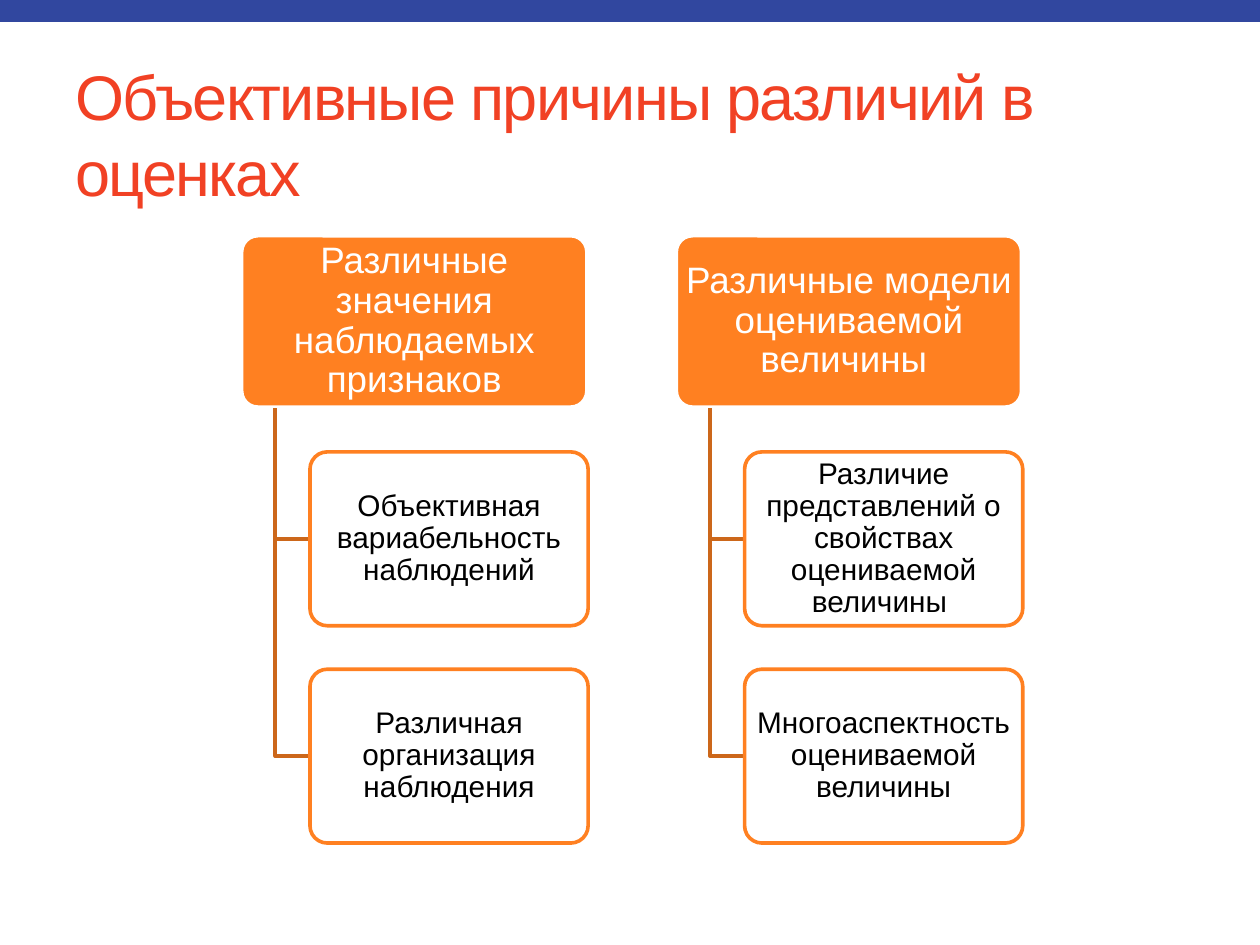
import dataclasses

import lxml.etree
import pptx
import pptx.dml.color
import pptx.enum.shapes
import pptx.enum.text
import pptx.oxml.ns
import pptx.util

Pt = pptx.util.Pt
RGB = pptx.dml.color.RGBColor
Kind = pptx.enum.shapes.MSO_SHAPE
Align = pptx.enum.text.PP_ALIGN
Anchor = pptx.enum.text.MSO_ANCHOR


@dataclasses.dataclass(frozen=True)
class Theme:
    font: str = "Arial"
    bar: RGB = RGB(0x31, 0x47, 0x9F)
    title: RGB = RGB(0xF1, 0x41, 0x24)
    root: RGB = RGB(0xFF, 0x80, 0x21)
    link: RGB = RGB(0xCC, 0x67, 0x1A)
    white: RGB = RGB(0xFF, 0xFF, 0xFF)
    black: RGB = RGB(0, 0, 0)
    title_size: float = 36
    root_size: float = 21
    leaf_size: float = 17
    thin: float = 2.08
    thick: float = 3.5


@dataclasses.dataclass(frozen=True)
class Style:
    fill: RGB
    line: RGB
    width: float
    ink: RGB
    size: float
    inset: tuple[float, float]
    alpha: int = 100


@dataclasses.dataclass(frozen=True)
class Branch:
    head: str
    leaves: tuple[str, ...]


THEME = Theme()
ROOT = Style(THEME.root, THEME.white, THEME.thick, THEME.white,
             THEME.root_size, (3.15, 2.1))
LEAF = Style(THEME.white, THEME.root, THEME.thin, THEME.black,
             THEME.leaf_size, (2.55, 1.7), alpha=90)

BRANCHES = (
    Branch("Различные значения наблюдаемых признаков",
           ("Объективная вариабельность наблюдений",
            "Различная организация наблюдения")),
    Branch("Различные модели оцениваемой величины ",
           ("Различие представлений о свойствах оцениваемой величины ",
            "Многоаспектность оцениваемой величины")),
)

# Tree grid in points: every step is 1.25 of a box
LEFT, TOP = 137.4, 134
WIDE, HIGH = 198.7, 99.36
STEP = 1.25


def add_band(slide, left: float, top: float, wide: float, high: float,
             color: RGB) -> None:
    band = slide.shapes.add_shape(Kind.RECTANGLE, Pt(left), Pt(top),
                                  Pt(wide), Pt(high))
    band.shadow.inherit = False
    band.fill.solid()
    band.fill.fore_color.rgb = color
    band.line.fill.background()


def add_box(slide, left: float, top: float, wide: float, text: str,
            style: Style) -> None:
    box = slide.shapes.add_shape(Kind.ROUNDED_RECTANGLE, Pt(left), Pt(top),
                                 Pt(wide), Pt(HIGH))
    box.adjustments[0] = 0.1
    box.shadow.inherit = False
    box.fill.solid()
    box.fill.fore_color.rgb = style.fill
    if style.alpha < 100:
        color = box.fill._xPr.find(".//" + pptx.oxml.ns.qn("a:srgbClr"))
        lxml.etree.SubElement(color, pptx.oxml.ns.qn("a:alpha"),
                              val=str(style.alpha * 1000))
    box.line.color.rgb = style.line
    box.line.width = Pt(style.width)

    frame = box.text_frame
    frame.text = text
    frame.word_wrap = True
    frame.vertical_anchor = Anchor.MIDDLE
    frame.margin_left = frame.margin_right = Pt(style.inset[0])
    frame.margin_top = frame.margin_bottom = Pt(style.inset[1])
    para = frame.paragraphs[0]
    para.alignment = Align.CENTER
    para.line_spacing = 0.9
    font = para.runs[0].font
    font.name, font.size = THEME.font, Pt(style.size)
    font.color.rgb = style.ink


def add_elbow(slide, left: float, top: float, right: float,
              low: float) -> None:
    pen = slide.shapes.build_freeform(Pt(left), Pt(top))
    pen.add_line_segments([(Pt(left), Pt(low)), (Pt(right), Pt(low))],
                          close=False)
    elbow = pen.convert_to_shape()
    elbow.shadow.inherit = False
    elbow.fill.background()
    elbow.line.color.rgb = THEME.link
    elbow.line.width = Pt(THEME.thin)


def add_branch(slide, left: float, branch: Branch) -> None:
    add_box(slide, left, TOP, WIDE, branch.head, ROOT)
    inner = left + 0.2 * WIDE
    for row, text in enumerate(branch.leaves, start=1):
        top = TOP + row * STEP * HIGH
        add_elbow(slide, left + 0.1 * WIDE, TOP + HIGH, inner, top + HIGH / 2)
        add_box(slide, inner, top, 0.8 * WIDE, text, LEAF)


def set_title(slide, text: str) -> None:
    title = slide.shapes.title
    title.left, title.top = Pt(36), Pt(41.8)
    title.width, title.height = Pt(648), Pt(69)
    frame = title.text_frame
    frame.text = text
    frame.word_wrap = True
    frame.auto_size = pptx.enum.text.MSO_AUTO_SIZE.NONE
    frame.vertical_anchor = Anchor.MIDDLE
    frame.paragraphs[0].alignment = Align.LEFT
    run = frame.paragraphs[0].runs[0]
    run.font.name, run.font.size = THEME.font, Pt(THEME.title_size)
    run.font.color.rgb = THEME.title
    run.font._element.set("spc", "-100")


def main() -> None:
    deck = pptx.Presentation()
    deck.slide_width, deck.slide_height = Pt(720), Pt(540)
    slide = deck.slides.add_slide(deck.slide_layouts[5])

    # Top bar, trimmed by a white band
    add_band(slide, 0, 0, 720, 28.8, THEME.bar)
    add_band(slide, 0, 12.6, 720, 29.2, THEME.white)

    # Title
    set_title(slide, "Объективные причины различий в оценках")

    # Two trees side by side
    for col, branch in enumerate(BRANCHES):
        add_branch(slide, LEFT + col * STEP * WIDE, branch)

    deck.save("out.pptx")


if __name__ == "__main__":
    main()
